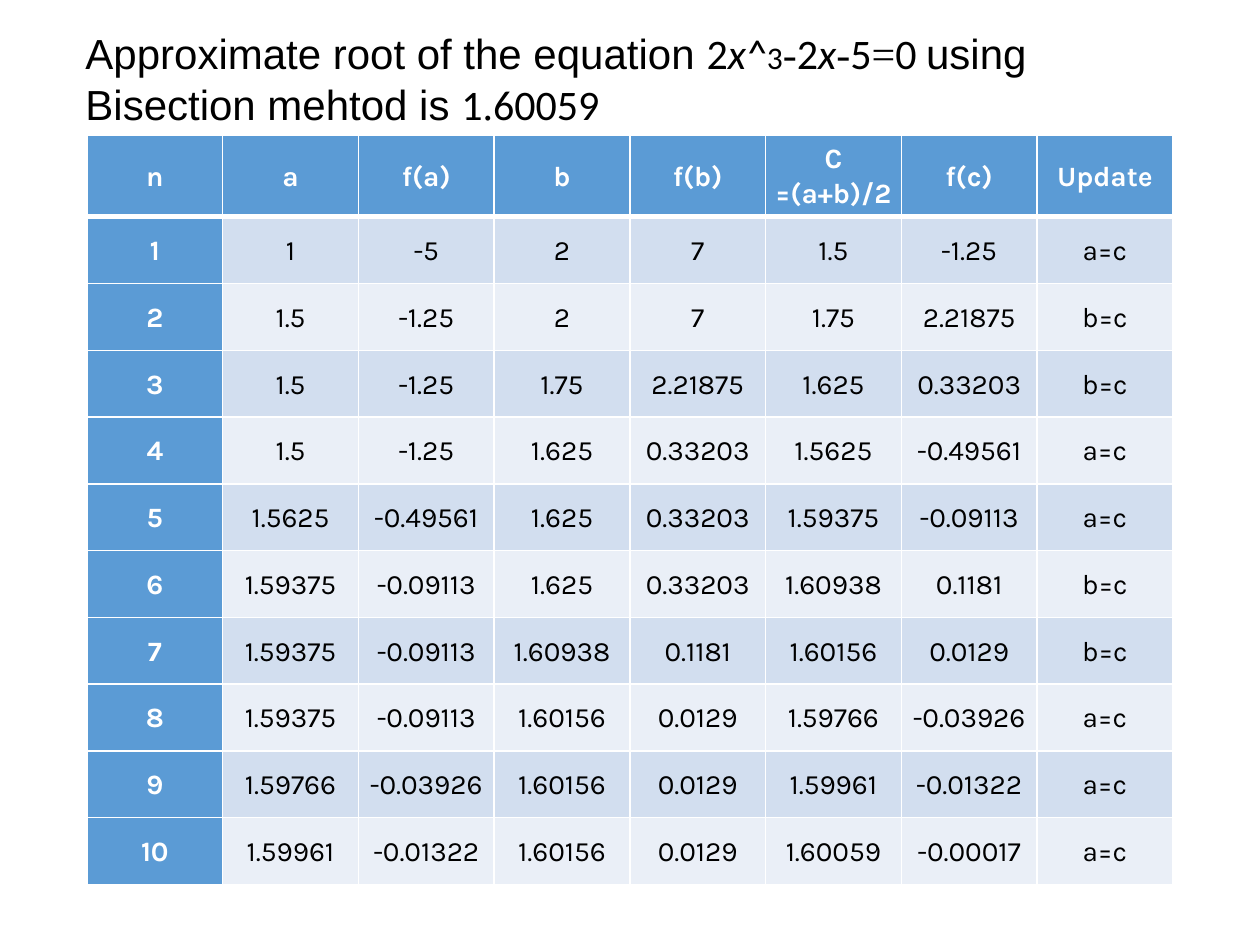
from lxml import etree
from pptx import Presentation
from pptx.dml.color import RGBColor
from pptx.enum.text import MSO_ANCHOR, PP_ALIGN
from pptx.oxml.ns import qn
from pptx.util import Inches, Pt

CENTER = PP_ALIGN.CENTER
MIDDLE = MSO_ANCHOR.MIDDLE

COLORS = {
    "header": "5B9BD5",
    "odd_row": "D2DEEF",
    "even_row": "EAEFF7",
    "border": "FFFFFF",
    "header_text": "FFFFFF",
    "text": "000000",
}

# text, font, size, italic
TITLE = [
    ("Approximate root of the equation ", "Arial", 24, False),
    ("2", "Calibri", 24, False),
    ("x^", "Calibri", 24, True),
    ("3", "Calibri", 18, False),
    ("-", "Times New Roman", 24, False),
    ("2", "Calibri", 24, False),
    ("x", "Calibri", 24, True),
    ("-", "Times New Roman", 24, False),
    ("5", "Calibri", 24, False),
    ("=", "Times New Roman", 24, False),
    ("0 ", "Calibri", 24, False),
    ("using Bisection mehtod is ", "Arial", 24, False),
    ("1", "Calibri", 24, False),
    (".", "Times New Roman", 24, False),
    ("60059", "Calibri", 24, False),
]

HEADINGS = ["n", "a", "f(a)", "b", "f(b)", "C =(a+b)/2", "f(c)", "Update"]
ITERATIONS = [
    ["1", "1", "-5", "2", "7", "1.5", "-1.25", "a=c"],
    ["2", "1.5", "-1.25", "2", "7", "1.75", "2.21875", "b=c"],
    ["3", "1.5", "-1.25", "1.75", "2.21875", "1.625", "0.33203", "b=c"],
    ["4", "1.5", "-1.25", "1.625", "0.33203", "1.5625", "-0.49561", "a=c"],
    ["5", "1.5625", "-0.49561", "1.625", "0.33203", "1.59375", "-0.09113", "a=c"],
    ["6", "1.59375", "-0.09113", "1.625", "0.33203", "1.60938", "0.1181", "b=c"],
    ["7", "1.59375", "-0.09113", "1.60938", "0.1181", "1.60156", "0.0129", "b=c"],
    ["8", "1.59375", "-0.09113", "1.60156", "0.0129", "1.59766", "-0.03926", "a=c"],
    ["9", "1.59766", "-0.03926", "1.60156", "0.0129", "1.59961", "-0.01322", "a=c"],
    ["10", "1.59961", "-0.01322", "1.60156", "0.0129", "1.60059", "-0.00017", "a=c"],
]

TABLE_LEFT, TABLE_TOP, TABLE_WIDTH = 0.69, 1.07, 8.62
HEADER_HEIGHT, ROW_HEIGHT = 0.65, 0.53
CELL_MARGIN = Inches(0.04)


def rgb(name):
    return RGBColor.from_string(COLORS[name])


def set_borders(cell, widths):
    """Draw cell borders; widths maps lnL, lnR, lnT, lnB to points."""
    properties = cell._tc.get_or_add_tcPr()
    for position, (side, width) in enumerate(widths.items()):
        line = etree.Element(qn(f"a:{side}"), w=str(Pt(width)))
        fill = etree.SubElement(line, qn("a:solidFill"))
        etree.SubElement(fill, qn("a:srgbClr"), val=COLORS["border"])
        properties.insert(position, line)


def fill_cell(cell, text, row, column):
    is_header = row == 0 or column == 0
    band = "odd_row" if row % 2 else "even_row"
    cell.fill.solid()
    cell.fill.fore_color.rgb = rgb("header" if is_header else band)
    cell.vertical_anchor = MIDDLE
    cell.margin_left = cell.margin_right = CELL_MARGIN
    cell.margin_top = cell.margin_bottom = CELL_MARGIN

    cell.text = text
    paragraph = cell.text_frame.paragraphs[0]
    paragraph.alignment = CENTER
    paragraph.line_spacing = 1.07
    font = paragraph.font
    font.name, font.size, font.bold = "Karla", Pt(16), is_header
    font.color.rgb = rgb("header_text" if is_header else "text")

    set_borders(cell, {
        "lnL": 1,
        "lnR": 1,
        "lnT": 3 if row == 1 else 1,
        "lnB": 3 if row == 0 else 1,
    })


def add_iteration_table(slide):
    rows = [HEADINGS] + ITERATIONS
    height = HEADER_HEIGHT + ROW_HEIGHT * len(ITERATIONS)
    table = slide.shapes.add_table(
        len(rows), len(HEADINGS), Inches(TABLE_LEFT), Inches(TABLE_TOP),
        Inches(TABLE_WIDTH), Inches(height)).table
    for column in table.columns:
        column.width = Inches(TABLE_WIDTH / len(HEADINGS))
    for r, values in enumerate(rows):
        table.rows[r].height = Inches(ROW_HEIGHT if r else HEADER_HEIGHT)
        for c, value in enumerate(values):
            fill_cell(table.cell(r, c), value, r, c)


def add_title(slide):
    title = slide.shapes.add_textbox(
        Inches(0.58), Inches(0.17), Inches(9.08), Inches(0.91))
    title.text_frame.word_wrap = True
    paragraph = title.text_frame.paragraphs[0]
    paragraph.font.color.rgb = rgb("text")
    for text, typeface, size, italic in TITLE:
        run = paragraph.add_run()
        run.text = text
        run.font.name, run.font.size, run.font.italic = typeface, Pt(size), italic


def main():
    presentation = Presentation()
    presentation.slide_width = Inches(10)
    presentation.slide_height = Inches(7.5)
    slide = presentation.slides.add_slide(presentation.slide_layouts[6])
    add_iteration_table(slide)
    add_title(slide)
    presentation.save("out.pptx")


if __name__ == "__main__":
    main()
